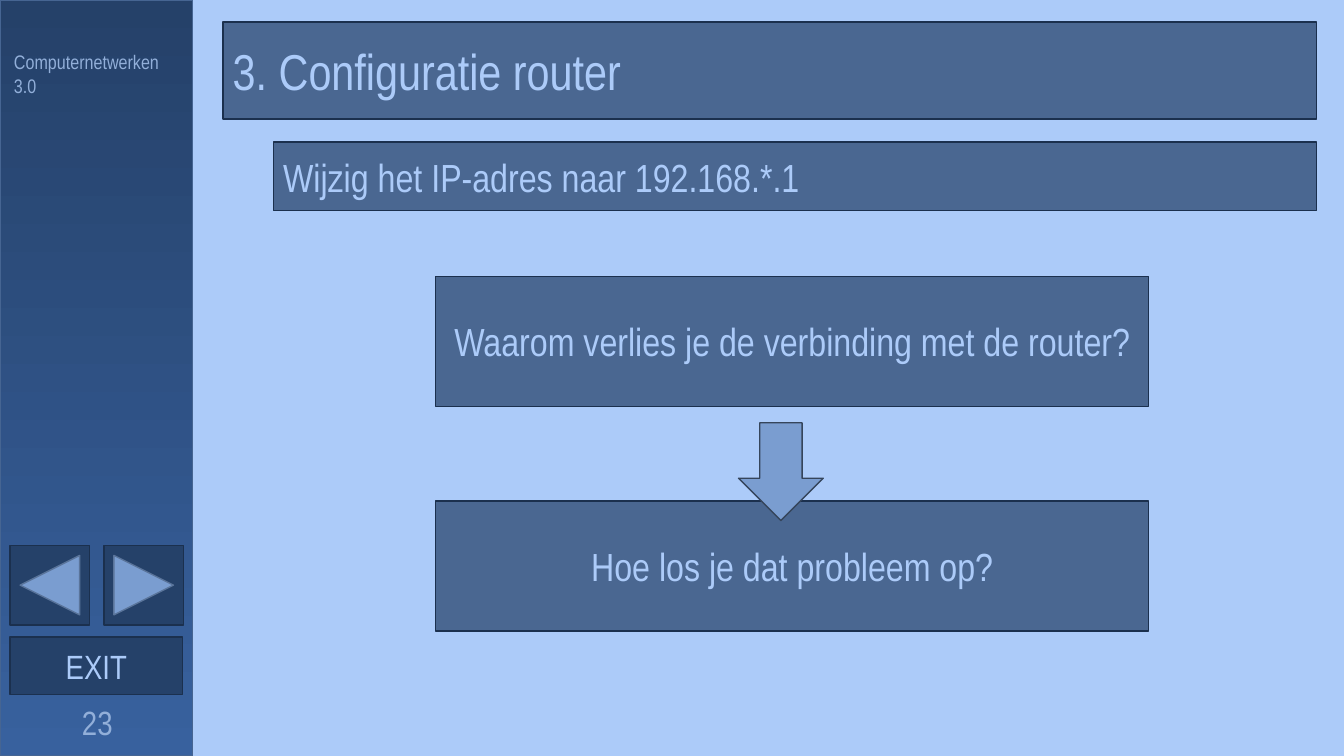
import pptx
import pptx.util
import pptx.dml.color
import pptx.enum.shapes
import pptx.enum.text
import pptx.oxml
import pptx.oxml.ns

Inches = pptx.util.Inches
Pt = pptx.util.Pt
KIND = pptx.enum.shapes.MSO_SHAPE
ALIGN = pptx.enum.text.PP_ALIGN
ANCHOR = pptx.enum.text.MSO_ANCHOR

HUES = {
    "sky": "ACCBF9",
    "navy": "254169",
    "royal": "38619E",
    "steel": "7A9DD0",
    "mist": "92AFD9",
    "edge": "1B304E",
    "side": "466592",
    "rim": "5A749A",
    "slate": "35455B",
}


def color(name):
    return pptx.dml.color.RGBColor.from_string(HUES[name])


def apply(item, form):
    for key, value in form.items():
        setattr(item, key, value)


def write(shape, text, size, hue="sky", align=ALIGN.LEFT, anchor=ANCHOR.MIDDLE):
    frame = shape.text_frame
    apply(frame, {"word_wrap": True, "vertical_anchor": anchor})
    para = frame.paragraphs[0]
    para.alignment = align
    run = para.add_run()
    run.text = text
    apply(run.font, {"name": "Arial Narrow", "size": Pt(size)})
    run.font.color.rgb = color(hue)


def draw(slide, kind, place, fill, line, turn=0):
    shape = slide.shapes.add_shape(kind, *map(Inches, place))
    shape.shadow.inherit = False
    shape.rotation = turn
    shape.fill.solid()
    shape.fill.fore_color.rgb = color(fill)
    shape.line.color.rgb = color(line)
    shape.line.width = Pt(1)
    return shape


def fade(shape, share):
    tone = shape.fill._xPr.find(".//" + pptx.oxml.ns.qn("a:srgbClr"))
    alpha = pptx.oxml.parse_xml(
        f'<a:alpha {pptx.oxml.ns.nsdecls("a")} val="{share * 1000}"/>'
    )
    tone.append(alpha)


def panel(slide, place, text, size, align=ALIGN.LEFT):
    shape = draw(slide, KIND.RECTANGLE, place, "navy", "edge")
    fade(shape, 72)
    write(shape, text, size, align=align)


def label(slide, place, text, size, **form):
    box = slide.shapes.add_textbox(*map(Inches, place))
    write(box, text, size, "mist", **form)


def sidebar(slide):
    bar = draw(slide, KIND.RECTANGLE, (0, 0, 1.91, 7.5), "navy", "side")
    bar.fill.gradient()
    bar.fill.gradient_angle = 270
    for stop, hue, place in zip(bar.fill.gradient_stops, ("navy", "royal"), (0, 1)):
        stop.color.rgb = color(hue)
        stop.position = place

    for left, turn in ((0.1, 270), (1.03, 90)):
        draw(slide, KIND.RECTANGLE, (left, 5.41, 0.79, 0.79), "navy", "edge")
        draw(slide, KIND.ISOSCELES_TRIANGLE, (left + 0.1, 5.51, 0.59, 0.59),
             "steel", "rim", turn)

    leave = draw(slide, KIND.RECTANGLE, (0.1, 6.32, 1.71, 0.57), "navy", "edge")
    write(leave, "EXIT", 24, align=ALIGN.CENTER)
    label(slide, (0.04, 0.45, 1.88, 0.34), "Computernetwerken 3.0", 14,
          anchor=ANCHOR.TOP)
    label(slide, (0.11, 6.96, 1.71, 0.4), "23", 24, align=ALIGN.CENTER)


def main():
    deck = pptx.Presentation()
    apply(deck, {"slide_width": Inches(13.33), "slide_height": Inches(7.5)})
    slide = deck.slides.add_slide(deck.slide_layouts[6])
    slide.background.fill.solid()
    slide.background.fill.fore_color.rgb = color("sky")

    sidebar(slide)
    panel(slide, (2.21, 0.22, 10.85, 0.96), "3. Configuratie router", 36)
    panel(slide, (2.71, 1.41, 10.35, 0.68), "Wijzig het IP-adres naar 192.168.*.1", 28)
    steps = (
        (2.74, "Waarom verlies je de verbinding met de router?"),
        (4.97, "Hoe los je dat probleem op?"),
    )
    for top, text in steps:
        panel(slide, (4.32, top, 7.07, 1.29), text, 28, ALIGN.CENTER)
    draw(slide, KIND.RIGHT_ARROW, (7.26, 4.26, 0.97, 0.84), "steel", "slate", 90)

    deck.save("out.pptx")


if __name__ == "__main__":
    main()
